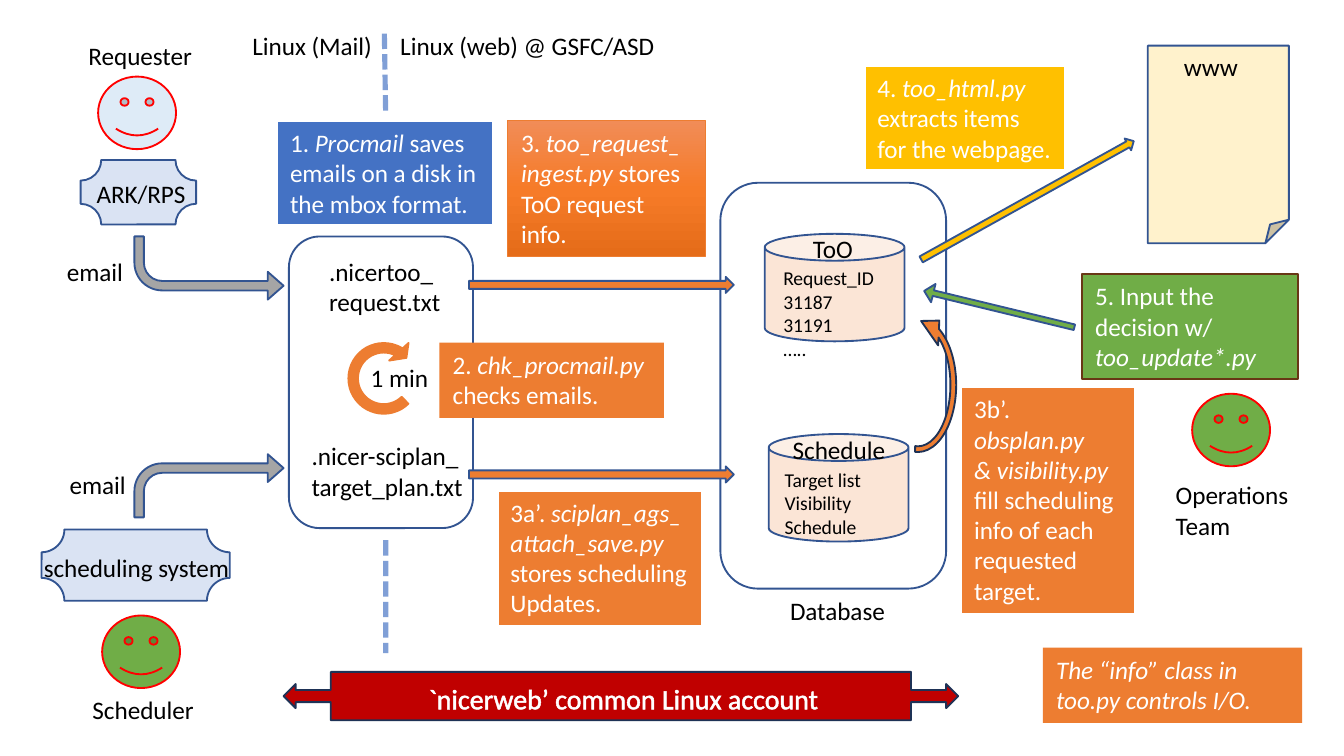
from copy import deepcopy

from lxml import etree
from pptx import Presentation
from pptx import util as u
from pptx.dml import color
from pptx.enum import dml, shapes, text
from pptx.oxml import ns

COLORS = {
    "black": "000000", "white": "FFFFFF", "navy": "325491", "ink": "1E3256",
    "orange": "ED7D31", "blue": "4472C4", "green": "70AD47", "gold": "FFC000",
    "grey": "A5A5A5", "red": "FF0000", "crimson": "C00000", "brown": "683715",
    "cream": "FFF2CC", "peach": "FBE5D6", "mist": "DAE3F3", "sky": "DEEBF7",
    "sunrise": "F18C57", "noon": "F67B28", "sunset": "E56C19",
}
RGB = {name: color.RGBColor.from_string(value) for name, value in COLORS.items()}
KIND = shapes.MSO_SHAPE

# Wide 16:9 page
deck = Presentation()
deck.slide_width = u.Inches(10)
deck.slide_height = u.Inches(10 * 9 / 16)
page = deck.slides.add_slide(deck.slide_layouts[6])


def add_figure(kind, at, fill=None, line="navy", adjust=(), turn=0, flip=False):
    figure = page.shapes.add_shape(kind, *map(u.Inches, at))
    figure.shadow.inherit = False
    if fill:
        figure.fill.solid()
        figure.fill.fore_color.rgb = RGB[fill]
    else:
        figure.fill.background()
    figure.line.color.rgb = RGB[line]
    figure.line.width = u.Pt(1)
    for index, value in enumerate(adjust):
        figure.adjustments[index] = value
    figure.rotation = turn
    if flip:
        figure.element.spPr.find(ns.qn("a:xfrm")).set("flipV", "1")


def add_text(words, at, size=13.5, ink="black", fill=None, line=None, width=1.5,
             wrap=True, align=None, tab=None, outline=None):
    """Add a text box; bars in the words switch italics on and off."""
    box = page.shapes.add_textbox(*map(u.Inches, at))
    frame = box.text_frame
    frame.word_wrap = wrap
    frame.auto_size = text.MSO_AUTO_SIZE.SHAPE_TO_FIT_TEXT
    if fill:
        box.fill.solid()
        box.fill.fore_color.rgb = RGB[fill]
    if line:
        box.line.color.rgb = RGB[line]
        box.line.width = u.Pt(width)
    for number, row in enumerate(words.split("\n")):
        para = frame.add_paragraph() if number else frame.paragraphs[0]
        para.alignment = align
        if tab:
            tabs = etree.SubElement(para._p.get_or_add_pPr(), ns.qn("a:tabLst"))
            etree.SubElement(tabs, ns.qn("a:tab"), pos=str(u.Inches(tab)), algn="l")
        for part, piece in enumerate(row.split("|")):
            if piece:
                span = para.add_run()
                span.text = piece
                span.font.name = "Calibri"
                span.font.size = u.Pt(size)
                span.font.color.rgb = RGB[ink]
                span.font.italic = part % 2 == 1
                if outline:
                    edge = etree.Element(ns.qn("a:ln"), w=str(u.Pt(outline)))
                    edge.append(deepcopy(span._r.rPr.find(ns.qn("a:solidFill"))))
                    span._r.rPr.insert(0, edge)
    return box


# Mail server, web page, database cylinders and systems
add_figure(KIND.ROUNDED_RECTANGLE, (2.15, 1.76, 1.37, 2.17))
add_figure(KIND.CIRCULAR_ARROW, (2.53, 2.49, 0.65, 0.65), "orange", "orange",
           (0.11, 10.92, 71.77, 135.51, 0.15), turn=180)
add_figure(KIND.FOLDED_CORNER, (8.54, 0.34, 1.05, 1.47), "cream")
for left, top in ((5.72, 3.23), (5.69, 1.74)):
    add_figure(KIND.CAN, (left, top, 1.04, 0.8), "peach")
for at in ((0.6, 1.19, 0.86, 0.48), (0.31, 3.94, 1.4, 0.53)):
    add_figure(KIND.PLAQUE, at, "mist", adjust=(0.32,))
add_figure(KIND.ROUNDED_RECTANGLE, (5.36, 1.36, 1.68, 3.02))

# People
for left, top, fill in ((8.87, 2.93, "green"), (0.73, 0.57, "sky"), (0.76, 4.58, "green")):
    add_figure(KIND.SMILEY_FACE, (left, top, 0.58, 0.54), fill, "red")

# Labels on one line, or with fixed line ends
for words, at in (
    ("Schedule", (5.8, 3.18, 0.9, 0.33)),
    ("ToO", (5.95, 1.69, 0.5, 0.33)),
    (".nicer-sciplan_\ntarget_plan.txt", (2.22, 3.23, 1.34, 0.56)),
    ("ARK/RPS", (0.62, 1.28, 0.88, 0.33)),
    ("www", (8.71, 0.33, 0.61, 0.33)),
    ("Scheduler", (0.59, 5.12, 0.97, 0.33)),
    ("Requester", (0.56, 0.25, 0.99, 0.33)),
):
    add_text(words, at, wrap=False)
add_text(".nicertoo_\nrequest.txt", (2.35, 1.86, 1.04, 0.56), fill="white", wrap=False)
add_text("Linux (Mail)\tLinux (web) @ GSFC/ASD", (1.78, 0.18, 3.23, 0.33), tab=1.1)

# Labels that wrap
for words, at in (
    ("Operations\nTeam", (8.65, 3.52, 1.06, 0.56)),
    ("email", (0.4, 1.86, 1.42, 0.33)),
    ("email", (0.42, 3.44, 1.42, 0.33)),
    ("1 min", (2.66, 2.65, 0.74, 0.33)),
    ("Database", (5.78, 4.38, 0.92, 0.33)),
):
    add_text(words, at)
add_text("scheduling system", (0.21, 4.06, 1.61, 0.33), align=text.PP_ALIGN.CENTER)
add_text("Target list\nVisibility\nSchedule", (5.74, 3.43, 0.98, 0.63), size=10.5)
add_text("Request_ID\n31187 31191\n…..", (5.73, 1.93, 0.94, 0.81), size=10.5)

# Border between the two servers
for start, end in (((2.86, 0.25), (2.87, 0.86)), ((2.87, 4.02), (2.87, 4.86))):
    border = page.shapes.add_connector(shapes.MSO_CONNECTOR.STRAIGHT,
                                       *map(u.Inches, start + end))
    border.line.color.rgb = RGB["blue"]
    border.line.width = u.Pt(2.75)
    border.line.dash_style = dml.MSO_LINE.SQUARE_DOT
    tint = border.element.spPr.find(".//" + ns.qn("a:srgbClr"))
    etree.SubElement(tint, ns.qn("a:alpha"), val="68000")
    etree.SubElement(border.element.spPr, ns.qn("a:effectLst"))

# Numbered steps
for words, at, fill, line, width in (
    ("1. |Procmail| saves\nemails on a disk in the mbox format.",
     (2.06, 0.9, 1.61, 0.78), "blue", "white", 1.5),
    ("2. |chk_procmail.py|\nchecks emails.",
     (3.27, 2.55, 1.67, 0.56), "orange", None, 0),
    ("4. |too_html.py|\nextracts items for the webpage.",
     (6.43, 0.49, 1.5, 0.78), "gold", "white", 1.5),
    ("5. Input the decision w/ |too_update*.py|",
     (8.05, 2.04, 1.61, 0.78), "green", "brown", 1),
    ("3b’. |obsplan.py|\n|& visibility.py |fill scheduling info of each requested target.",
     (7.15, 2.88, 1.3, 1.69), "orange", "white", 1.5),
    ("|The “info” class in too.py controls I/O.|",
     (7.76, 4.82, 1.93, 0.56), "orange", None, 0),
):
    add_text(words, at, ink="white", fill=fill, line=line, width=width)
add_text("3a’. |sciplan_ags_|\n|attach_save.py|\nstores scheduling\nUpdates.",
         (3.7, 3.65, 1.53, 1.01), ink="white", fill="orange", line="white", wrap=False)
ingest = add_text("3. |too_request_|\n|ingest.py |stores ToO request info.",
                  (3.78, 0.9, 1.47, 1.01), ink="white", line="orange", width=0.5)
ingest.fill.gradient()
ingest.fill.gradient_angle = 270
stop_list = ingest.element.find(".//" + ns.qn("a:gsLst"))
stop_list.insert(1, deepcopy(stop_list[0]))
for stop, place, name in zip(ingest.fill.gradient_stops, (0, 0.5, 1),
                             ("sunrise", "noon", "sunset")):
    stop.position = place
    stop.color.rgb = RGB[name]

# Arrows
for top, flip in ((1.76, True), (3.38, False)):
    add_figure(KIND.BENT_ARROW, (1, top, 1.11, 0.47), "grey",
               adjust=(0.15, 0.22, 0.25, 0.44), flip=flip)
for top in (2.06, 3.47):
    add_figure(KIND.RIGHT_ARROW, (3.49, top, 1.97, 0.12), "orange")
add_figure(KIND.RIGHT_ARROW, (6.86, 2.23, 1.15, 0.14), "green",
           adjust=(0.3, 0.5), turn=193.6, flip=True)
add_figure(KIND.RIGHT_ARROW, (6.74, 1.44, 1.81, 0.1), "gold", turn=330.9)
add_figure(KIND.CIRCULAR_ARROW, (6.26, 2.51, 1.14, 0.71), "orange", "ink",
           (0.06, 11.42, 202.94, 106.44, 0.13), turn=270, flip=True)

# Shared account
add_figure(KIND.LEFT_RIGHT_ARROW_CALLOUT, (2.11, 5, 5.02, 0.36), "crimson", "ink",
           (0.25, 0.25, 0.25, 0.86))
add_text("`nicerweb’ common Linux account", (2.14, 5.02, 5, 0.35), size=15,
         ink="white", align=text.PP_ALIGN.CENTER, outline=0.75)

deck.save("out.pptx")
